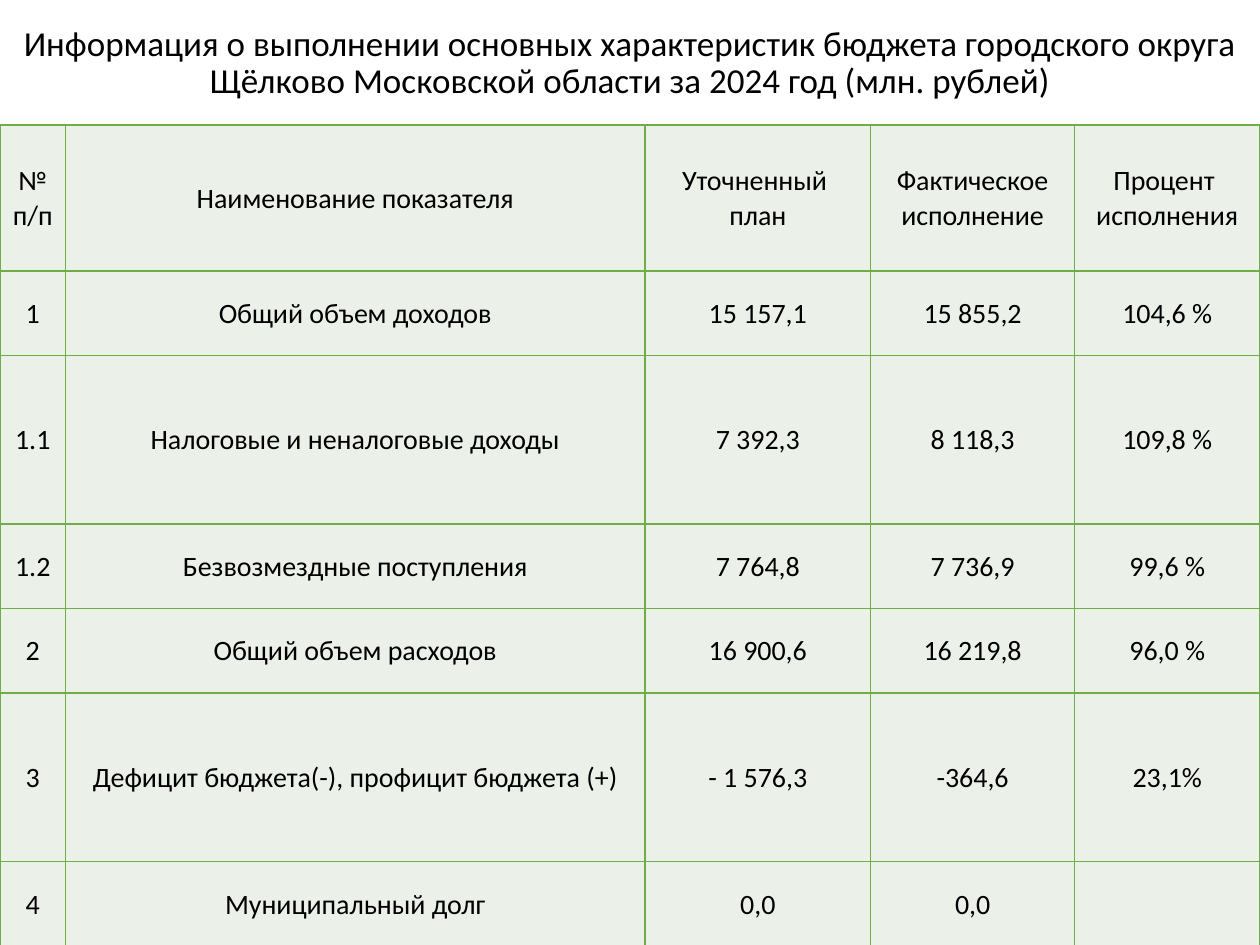
from dataclasses import astuple, dataclass

from lxml import etree
from pptx import Presentation
from pptx import util as u
from pptx.dml.color import RGBColor
from pptx.enum import text
from pptx.oxml.ns import qn

COLORS = {"text": "000000", "border": "70AD47", "cell": "EBF1E9"}
FONT = "Calibri"
TITLE = ("Информация о выполнении основных характеристик бюджета городского округа "
         "Щёлково Московской области за 2024 год (млн. рублей)")
COL_WIDTHS = [0.52, 4.6, 1.79, 1.62, 1.47]
HEADER_HEIGHT, ROW_HEIGHT = 1.16, 0.67
TITLE_FORMAT = {"word_wrap": True, "vertical_anchor": text.MSO_ANCHOR.MIDDLE,
                "auto_size": text.MSO_AUTO_SIZE.NONE}
CELL_FORMAT = {"vertical_anchor": text.MSO_ANCHOR.MIDDLE,
               "margin_left": u.Inches(0.01), "margin_right": u.Inches(0.01),
               "margin_top": u.Inches(0.01), "margin_bottom": u.Inches(0)}


@dataclass
class BudgetRow:
    number: str
    indicator: str
    plan: str
    actual: str
    percent: str


HEADER = BudgetRow("№ п/п", "Наименование показателя", "Уточненный \nплан",
                   "Фактическое исполнение", "Процент \nисполнения")
# Each row with its height in units of ROW_HEIGHT
ROWS = [
    (BudgetRow("1", "Общий объем доходов", "15 157,1", "15 855,2", "104,6 %"), 1),
    (BudgetRow("1.1", "Налоговые и неналоговые доходы", "7 392,3", "8 118,3", "109,8 %"), 2),
    (BudgetRow("1.2", "Безвозмездные поступления", "7 764,8", "7 736,9", "99,6 %"), 1),
    (BudgetRow("2", "Общий объем расходов", "16 900,6", "16 219,8", "96,0 %"), 1),
    (BudgetRow("3", "Дефицит бюджета(-), профицит бюджета (+)",
               "- 1 576,3", "-364,6", "23,1%"), 2),
    (BudgetRow("4", "Муниципальный долг", "0,0", "0,0", ""), 1),
]


def apply_format(target, values: dict) -> None:
    for name, value in values.items():
        setattr(target, name, value)


def write_centred(tf, content: str, size: int, line_spacing: float = 1.0) -> None:
    """Write one centred paragraph for each line of content."""
    tf.text = content
    for p in tf.paragraphs:
        apply_format(p, {"alignment": text.PP_ALIGN.CENTER, "line_spacing": line_spacing})
        for r in p.runs:
            apply_format(r.font, {"name": FONT, "size": u.Pt(size)})
            r.font.color.rgb = RGBColor.from_string(COLORS["text"])


def add_borders(cell, width: float = 1) -> None:
    """Add the four side lines; call before the fill, as the schema orders them."""
    tc_pr = cell._tc.get_or_add_tcPr()
    for side in ("lnL", "lnR", "lnT", "lnB"):
        ln = etree.SubElement(tc_pr, qn(f"a:{side}"), w=str(u.Pt(width)))
        fill = etree.SubElement(ln, qn("a:solidFill"))
        etree.SubElement(fill, qn("a:srgbClr"), val=COLORS["border"])


def fill_row(table, index: int, row: BudgetRow, height: float) -> None:
    table.rows[index].height = u.Inches(height)
    for cell, content in zip(table.rows[index].cells, astuple(row)):
        apply_format(cell, CELL_FORMAT)
        write_centred(cell.text_frame, content, 16)
        add_borders(cell)
        cell.fill.solid()
        cell.fill.fore_color.rgb = RGBColor.from_string(COLORS["cell"])


def add_title(s) -> None:
    sp = s.shapes.add_textbox(u.Inches(0), u.Inches(0.15), u.Inches(10), u.Inches(0.71))
    apply_format(sp.text_frame, TITLE_FORMAT)
    write_centred(sp.text_frame, TITLE, 20, 0.9)


def add_budget_table(s) -> None:
    table = s.shapes.add_table(len(ROWS) + 1, len(COL_WIDTHS), u.Inches(0), u.Inches(0.99),
                               u.Inches(10), u.Inches(6.51)).table
    for column, width in zip(table.columns, COL_WIDTHS):
        column.width = u.Inches(width)
    fill_row(table, 0, HEADER, HEADER_HEIGHT)
    for index, (row, units) in enumerate(ROWS, start=1):
        fill_row(table, index, row, units * ROW_HEIGHT)


def main() -> None:
    prs = Presentation()
    apply_format(prs, {"slide_width": u.Inches(10), "slide_height": u.Inches(7.5)})
    s = prs.slides.add_slide(prs.slide_layouts[6])
    add_title(s)
    add_budget_table(s)
    prs.save("out.pptx")


if __name__ == "__main__":
    main()
